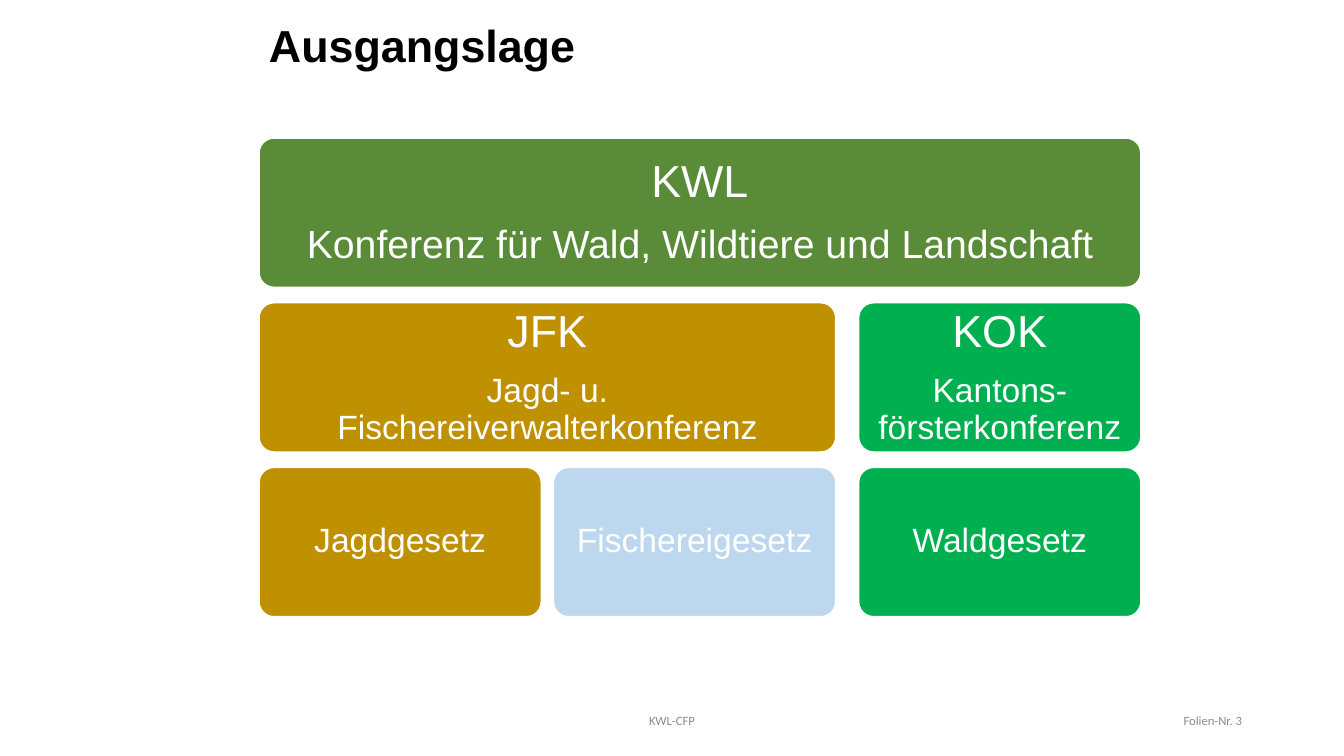
import pptx
import pptx.util
import pptx.dml.color
import pptx.enum.shapes
import pptx.enum.text

Cm, Pt = pptx.util.Cm, pptx.util.Pt
RGB = pptx.dml.color.RGBColor
ALIGN = pptx.enum.text.PP_ALIGN
MIDDLE = pptx.enum.text.MSO_ANCHOR.MIDDLE
ROUND = pptx.enum.shapes.MSO_SHAPE.ROUNDED_RECTANGLE

BLACK = RGB(0x00, 0x00, 0x00)
WHITE = RGB(0xFF, 0xFF, 0xFF)
GRAY = RGB(0x8C, 0x8C, 0x8C)
OLIVE = RGB(0x5A, 0x8B, 0x39)
GOLD = RGB(0xBF, 0x90, 0x00)
BLUE = RGB(0xBD, 0xD7, 0xEE)
GREEN = RGB(0x00, 0xB0, 0x50)


def write(frame, lines, font="Arial", color=WHITE, bold=False,
          align=ALIGN.CENTER, space=1, after=0, inset=None):
    """Fill a text frame with (text, size) lines."""
    frame.word_wrap = True
    frame.vertical_anchor = MIDDLE
    if inset is not None:
        frame.margin_left = frame.margin_right = Cm(inset)
        frame.margin_top = frame.margin_bottom = Cm(inset)
    for i, (text, size) in enumerate(lines):
        para = frame.add_paragraph() if i else frame.paragraphs[0]
        para.text = text
        para.alignment = align
        para.line_spacing = space
        para.space_after = Pt(round(size * after, 1))
        para.font.name = font
        para.font.size = Pt(size)
        para.font.bold = bold
        para.font.color.rgb = color


def label(slide, box, text, size, **form):
    shape = slide.shapes.add_textbox(*map(Cm, box))
    write(shape.text_frame, [(text, size)], **form)


def tile(slide, box, fill, lines):
    shape = slide.shapes.add_shape(ROUND, *map(Cm, box))
    shape.adjustments[0] = 0.1
    shape.shadow.inherit = False
    shape.fill.solid()
    shape.fill.fore_color.rgb = fill
    shape.line.color.rgb = WHITE
    shape.line.width = Pt(1)
    inset = 0.33 if len(lines) > 1 else 0.25
    write(shape.text_frame, lines, space=0.9, after=0.38, inset=inset)


def chart(slide, box):
    """Three levels: conference, sub-conferences, laws."""
    left, top, width, height = box
    near, far, gap = 0.31, 0.58, 0.39
    col = (width - near - far) / 3
    high = (height - 2 * gap) / 3
    pair = 2 * col + near
    xs = [0, col + near, pair + far]
    tiles = [
        (0, 0, width, OLIVE,
         [("KWL", 32), ("Konferenz für Wald, Wildtiere und Landschaft", 28)]),
        (1, xs[0], pair, GOLD,
         [("JFK", 32), ("Jagd- u. Fischereiverwalterkonferenz", 24)]),
        (1, xs[2], col, GREEN,
         [("KOK", 32), ("Kantons- försterkonferenz", 24)]),
        (2, xs[0], col, GOLD, [("Jagdgesetz", 24)]),
        (2, xs[1], col, BLUE, [("Fischereigesetz", 24)]),
        (2, xs[2], col, GREEN, [("Waldgesetz", 24)]),
    ]
    for row, x, wide, fill, lines in tiles:
        y = top + row * (high + gap)
        tile(slide, (left + x, y, wide, high), fill, lines)


def footer(slide, box):
    left, top, width, height = box
    form = dict(font="Calibri", color=GRAY)
    label(slide, (left, top, 11.43, height), "KWL-CFP", 9, **form)
    label(slide, (left + width - 7.62, top, 7.62, height), "Folien-Nr. 3", 9,
          align=ALIGN.RIGHT, **form)


def main():
    deck = pptx.Presentation()
    deck.slide_width, deck.slide_height = Cm(33.87), Cm(19.05)
    slide = deck.slides.add_slide(deck.slide_layouts[6])
    # Title
    label(slide, (6.53, 0.36, 21.36, 1.7), "Ausgangslage", 32, color=BLACK,
          bold=True, align=ALIGN.LEFT, space=0.9)
    # Organisation
    chart(slide, (6.53, 3.48, 22.22, 12.06))
    # Footer
    footer(slide, (11.22, 17.66, 20.33, 1.01))
    deck.save("out.pptx")


if __name__ == "__main__":
    main()
